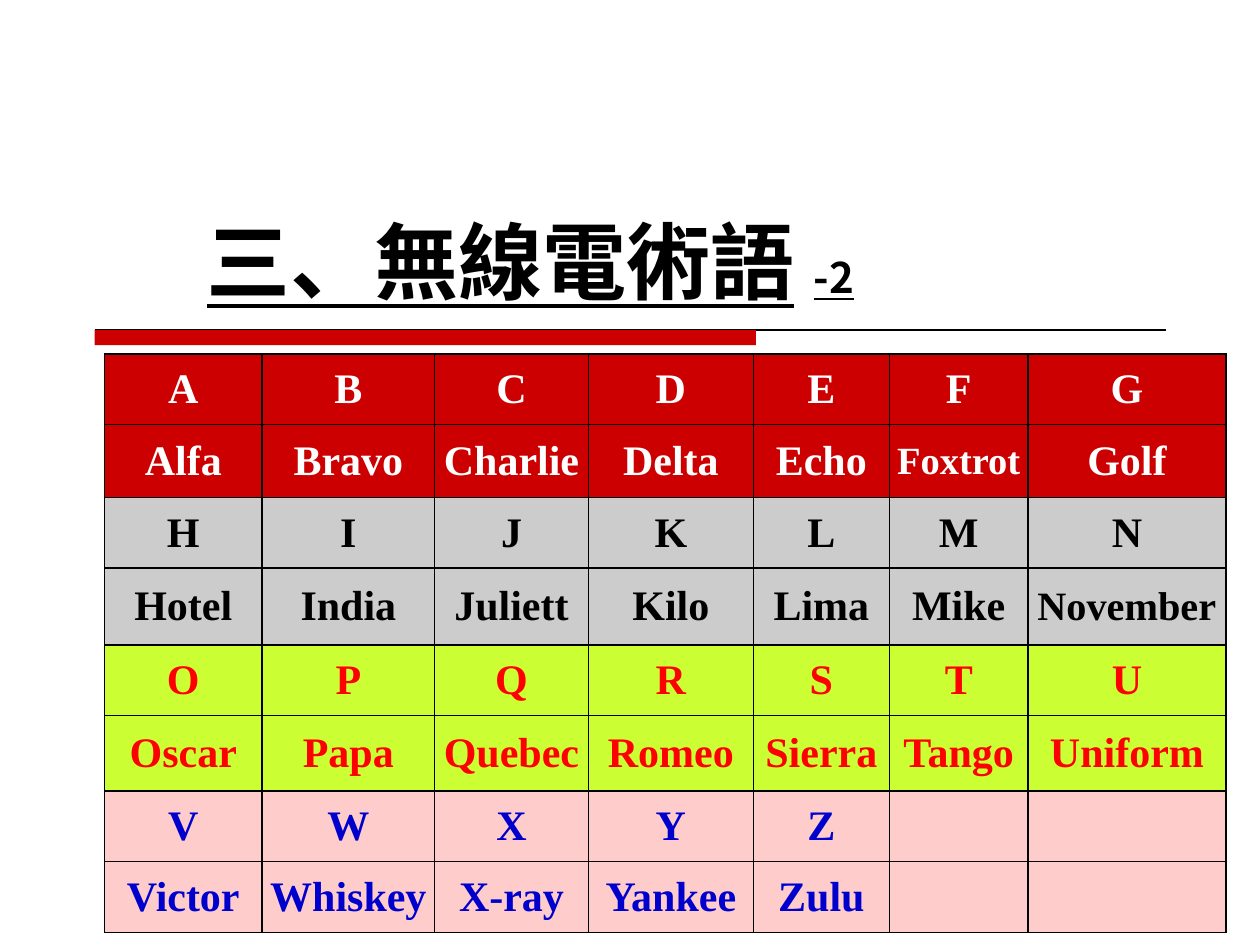
"""Build the slide with the radio spelling alphabet."""
from lxml.etree import SubElement as Sub
from pptx import Presentation
from pptx.dml.color import RGBColor
from pptx.enum.shapes import MSO_CONNECTOR as Conn, MSO_SHAPE as Shape
from pptx.enum.text import MSO_ANCHOR as Anchor, PP_ALIGN as Align
from pptx.oxml.ns import qn
from pptx.util import Inches, Pt

WORDS = [
    "Alfa Bravo Charlie Delta Echo Foxtrot Golf".split(),
    "Hotel India Juliett Kilo Lima Mike November".split(),
    "Oscar Papa Quebec Romeo Sierra Tango Uniform".split(),
    "Victor Whiskey X-ray Yankee Zulu".split() + ["", ""],
]
TONES = [("CC0000", "FFFFFF"), ("CCCCCC", "000000"),
         ("CCFF33", "FF0000"), ("FFCCCC", "0000CC")]
SIZES = {"Foxtrot": 22, "November": 23}
COLS = [1.25, 1.37, 1.22, 1.31, 1.08, 1.1, 1.57]
ROWS = [0.56, 0.58, 0.56, 0.61, 0.56, 0.6, 0.56, 0.56]


def hue(code):
    return RGBColor.from_string(code)


def assign(item, values):
    for name, value in values.items():
        setattr(item, name, value)


class Deck:
    """Hold the style and the current slide."""
    head = "Noto Sans CJK SC"
    body = "Times New Roman"
    ink = "000000"
    red = "CC0000"

    def __init__(self):
        self.show = Presentation()
        assign(self.show, {"slide_width": Inches(10),
                           "slide_height": Inches(7.5)})
        self.slide = self.show.slides.add_slide(self.show.slide_layouts[5])

    def text(self, para, words, size, face, color, line=False):
        run = para.add_run()
        run.text = words
        assign(run.font, {"name": face, "size": Pt(size),
                          "bold": True, "underline": line})
        run.font.color.rgb = hue(color)
        east = Sub(run._r.get_or_add_rPr(), qn("a:ea"))
        east.set("typeface", face)

    def title(self, box, parts):
        shape = self.slide.shapes.title
        names = ("left", "top", "width", "height")
        assign(shape, dict(zip(names, map(Inches, box))))
        frame = shape.text_frame
        assign(frame, {"vertical_anchor": Anchor.BOTTOM, "word_wrap": False})
        para = frame.paragraphs[0]
        para.alignment = Align.LEFT
        for words, size, line in parts:
            self.text(para, words, size, self.head, self.ink, line)

    def rule(self, left, right, top):
        link = self.slide.shapes.add_connector(
            Conn.STRAIGHT, Inches(left), Inches(top), Inches(right), Inches(top))
        link.line.color.rgb = hue(self.ink)
        link.line.width = Pt(0.75)
        Sub(link._element.spPr, qn("a:effectLst"))

    def bar(self, box):
        shape = self.slide.shapes.add_shape(Shape.RECTANGLE, *map(Inches, box))
        shape.shadow.inherit = False
        shape.fill.solid()
        shape.fill.fore_color.rgb = hue(self.red)
        shape.line.fill.background()

    def edge(self, cell):
        props = cell._tc.get_or_add_tcPr()
        for side in ("lnL", "lnR", "lnT", "lnB"):
            line = Sub(props, qn("a:" + side), w=str(Pt(1)))
            fill = Sub(line, qn("a:solidFill"))
            Sub(fill, qn("a:srgbClr"), val=self.ink)

    def cell(self, cell, words, back, color):
        self.edge(cell)
        cell.fill.solid()
        cell.fill.fore_color.rgb = hue(back)
        sides = ("left", "right", "top", "bottom")
        assign(cell, {"margin_" + side: 0 for side in sides})
        cell.vertical_anchor = Anchor.MIDDLE
        para = cell.text_frame.paragraphs[0]
        para.alignment = Align.CENTER
        if words:
            self.text(para, words, SIZES.get(words, 24), self.body, color)

    def table(self, left, top):
        box = map(Inches, (left, top, sum(COLS), sum(ROWS)))
        grid = self.slide.shapes.add_table(len(ROWS), len(COLS), *box).table
        assign(grid, {"first_row": False, "horz_banding": False})
        for col, width in zip(grid.columns, COLS):
            col.width = Inches(width)
        for row, height in zip(grid.rows, ROWS):
            row.height = Inches(height)
        for band, (names, tone) in enumerate(zip(WORDS, TONES)):
            for col, name in enumerate(names):
                self.cell(grid.cell(2 * band, col), name[:1], *tone)
                self.cell(grid.cell(2 * band + 1, col), name, *tone)


def main():
    deck = Deck()
    deck.rule(0.75, 9.25, 2.62)
    deck.bar((0.75, 2.62, 5.25, 0.12))
    deck.title((1.54, 1.47, 5.35, 1.04),
               [("三、無線電術語", 48, True), (" ", 48, False), ("-2", 24, True)])
    deck.table(0.83, 2.81)
    deck.show.save("out.pptx")


if __name__ == "__main__":
    main()
